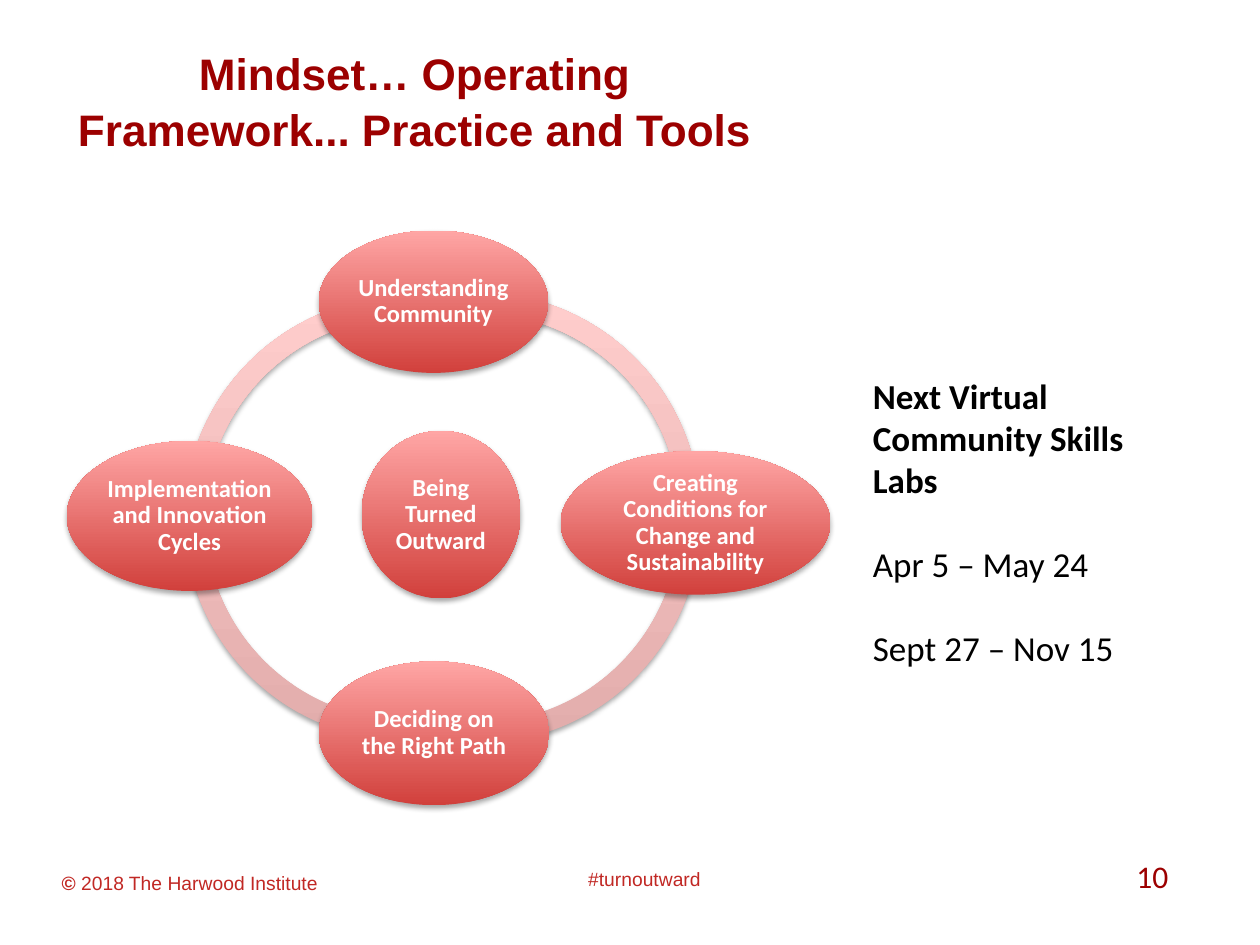
import pptx
import pptx.util
import pptx.dml.color
import pptx.enum.shapes
import pptx.enum.text
import lxml.etree
from dataclasses import dataclass

Inches = pptx.util.Inches
Pt = pptx.util.Pt
Shapes = pptx.enum.shapes.MSO_SHAPE
Align = pptx.enum.text.PP_ALIGN
Anchor = pptx.enum.text.MSO_ANCHOR


@dataclass(frozen=True)
class Theme:
    heading_font: str = "Arial"
    body_font: str = "Calibri"
    dark_red: str = "9C0000"
    footer_red: str = "C12824"
    black: str = "000000"
    white: str = "FFFFFF"
    ring: tuple = ("E2ADAC", "FFCDCC")
    bubble: tuple = ("D1403C", "FFA6A5")
    title_size: float = 25.2
    dates_size: float = 20
    page_size: float = 18
    bubble_size: float = 14
    footer_size: float = 11


THEME = Theme()
RING_DIAMETER = 3.55
RING_THICKNESS = 0.046

ARCS = [
    (1.46, 2.33, 49.814, 108.181),
    (2.01, 2.35, 0.638, 60.742),
    (2.01, 2.32, 155.089, 1.148),
    (1.46, 2.35, 108.53, 166.036),
]

BUBBLES = [
    ("Being Turned Outward", 2.87, 3.42, 1.26, 1.33),
    ("Implementation and Innovation Cycles", 0.53, 3.5, 1.95, 1.19),
    ("Understanding Community", 2.53, 1.83, 1.82, 1.13),
    ("Creating Conditions for Change and Sustainability", 4.45, 3.58, 2.14, 1.14),
    ("Deciding on the Right Path", 2.53, 5.25, 1.83, 1.14),
]

LAB_DATES = [
    ("Next Virtual", True, 0),
    ("Community Skills Labs", True, 0),
    ("Apr 5 – May 24", False, 24),
    ("Sept 27 – Nov 15", False, 24),
]


def apply(target, formats):
    for attribute, value in formats.items():
        setattr(target, attribute, value)


def add_run(paragraph, words, font, size, color, bold=False):
    run = paragraph.add_run()
    run.text = words
    apply(run.font, {"name": font, "size": Pt(size), "bold": bold})
    run.font.color.rgb = pptx.dml.color.RGBColor.from_string(color)


def add_text_frame(slide, left, top, width, height, **formats):
    frame = slide.shapes.add_textbox(
        Inches(left), Inches(top), Inches(width), Inches(height)
    ).text_frame
    apply(frame, {"word_wrap": True, **formats})
    return frame


def add_soft_shadow(shape):
    shape.shadow.inherit = False
    main_ns = pptx.oxml.ns.qn("a:effectLst").replace("effectLst", "")
    effects = shape.element.spPr.find(main_ns + "effectLst")
    shadow = lxml.etree.SubElement(
        effects,
        main_ns + "outerShdw",
        blurRad=str(Pt(3.1)),
        dist=str(Pt(1.8)),
        dir=str(90 * 60000),
        rotWithShape="0",
    )
    tint = lxml.etree.SubElement(shadow, main_ns + "srgbClr", val=THEME.black)
    lxml.etree.SubElement(tint, main_ns + "alpha", val="35000")


def add_shaded_shape(slide, preset, left, top, width, height, shades):
    shape = slide.shapes.add_shape(
        preset, Inches(left), Inches(top), Inches(width), Inches(height)
    )
    shape.fill.gradient()
    shape.fill.gradient_angle = 90
    for stop, shade in zip(shape.fill.gradient_stops, shades):
        stop.color.rgb = pptx.dml.color.RGBColor.from_string(shade)
    shape.line.fill.background()
    add_soft_shadow(shape)
    return shape


def add_ring_arc(slide, left, top, start, end):
    arc = add_shaded_shape(
        slide, Shapes.BLOCK_ARC, left, top, RING_DIAMETER, RING_DIAMETER, THEME.ring
    )
    for index, value in enumerate((start, end, RING_THICKNESS)):
        arc.adjustments[index] = value


def add_bubble(slide, label, left, top, width, height):
    bubble = add_shaded_shape(
        slide, Shapes.OVAL, left, top, width, height, THEME.bubble
    )
    sides = ("margin_left", "margin_right", "margin_top", "margin_bottom")
    apply(bubble.text_frame, {
        "word_wrap": True,
        "vertical_anchor": Anchor.MIDDLE,
        **{side: Inches(0.02) for side in sides},
    })
    paragraph = bubble.text_frame.paragraphs[0]
    apply(paragraph, {"alignment": Align.CENTER, "line_spacing": 0.9})
    add_run(paragraph, label, THEME.body_font, THEME.bubble_size, THEME.white, True)


def add_title(slide):
    frame = add_text_frame(
        slide, 0.5, 0.3, 5.58, 1.25,
        margin_left=Inches(0.05), margin_right=Inches(0.05),
    )
    title = frame.paragraphs[0]
    apply(title, {"alignment": Align.CENTER, "line_spacing": 1.05})
    add_run(title, "Mindset… Operating Framework... Practice and Tools",
            THEME.heading_font, THEME.title_size, THEME.dark_red, True)


def add_lab_dates(slide):
    frame = add_text_frame(slide, 6.83, 2.92, 2.7, 2.12, word_wrap=False)
    for index, (line, bold, gap) in enumerate(LAB_DATES):
        paragraph = frame.add_paragraph() if index else frame.paragraphs[0]
        if gap:
            paragraph.space_before = Pt(gap)
        add_run(paragraph, line, THEME.body_font, THEME.dates_size, THEME.black, bold)


def add_footer(slide):
    style = (THEME.heading_font, THEME.footer_size, THEME.footer_red)
    middle = {"vertical_anchor": Anchor.MIDDLE}
    rights = add_text_frame(slide, 0.39, 6.86, 2.5, 0.29, **middle).paragraphs[0]
    add_run(rights, "©", *style, True)
    add_run(rights, " 2018 The Harwood Institute", *style)
    hashtag = add_text_frame(slide, 4.17, 6.83, 1.89, 0.29, **middle).paragraphs[0]
    hashtag.alignment = Align.CENTER
    add_run(hashtag, "#turnoutward", *style)
    page = add_text_frame(slide, 8.92, 6.75, 0.58, 0.4).paragraphs[0]
    add_run(page, "10", THEME.body_font, THEME.page_size, THEME.dark_red)


def main():
    deck = pptx.Presentation()
    apply(deck, {"slide_width": Inches(10), "slide_height": Inches(7.5)})
    slide = deck.slides.add_slide(deck.slide_layouts[6])
    add_title(slide)
    for arc in ARCS:
        add_ring_arc(slide, *arc)
    for bubble in BUBBLES:
        add_bubble(slide, *bubble)
    add_lab_dates(slide)
    add_footer(slide)
    deck.save("out.pptx")


if __name__ == "__main__":
    main()
